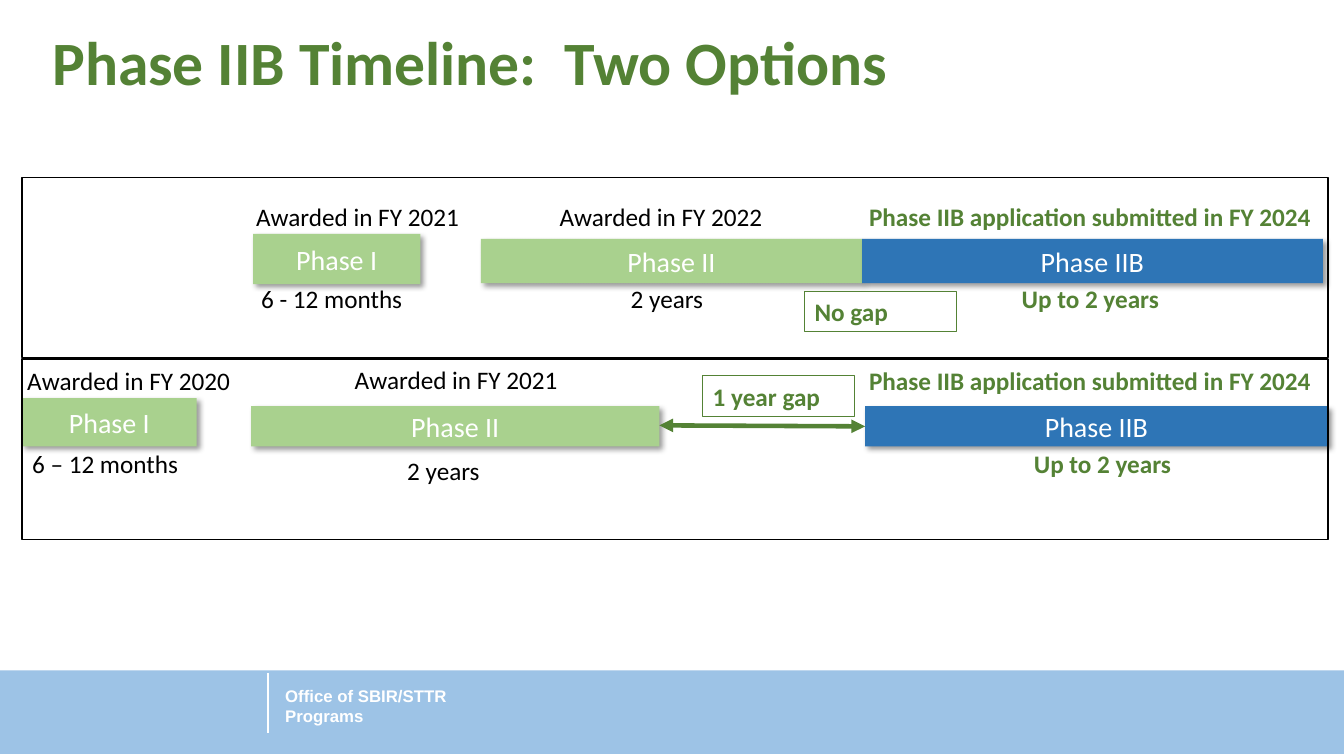
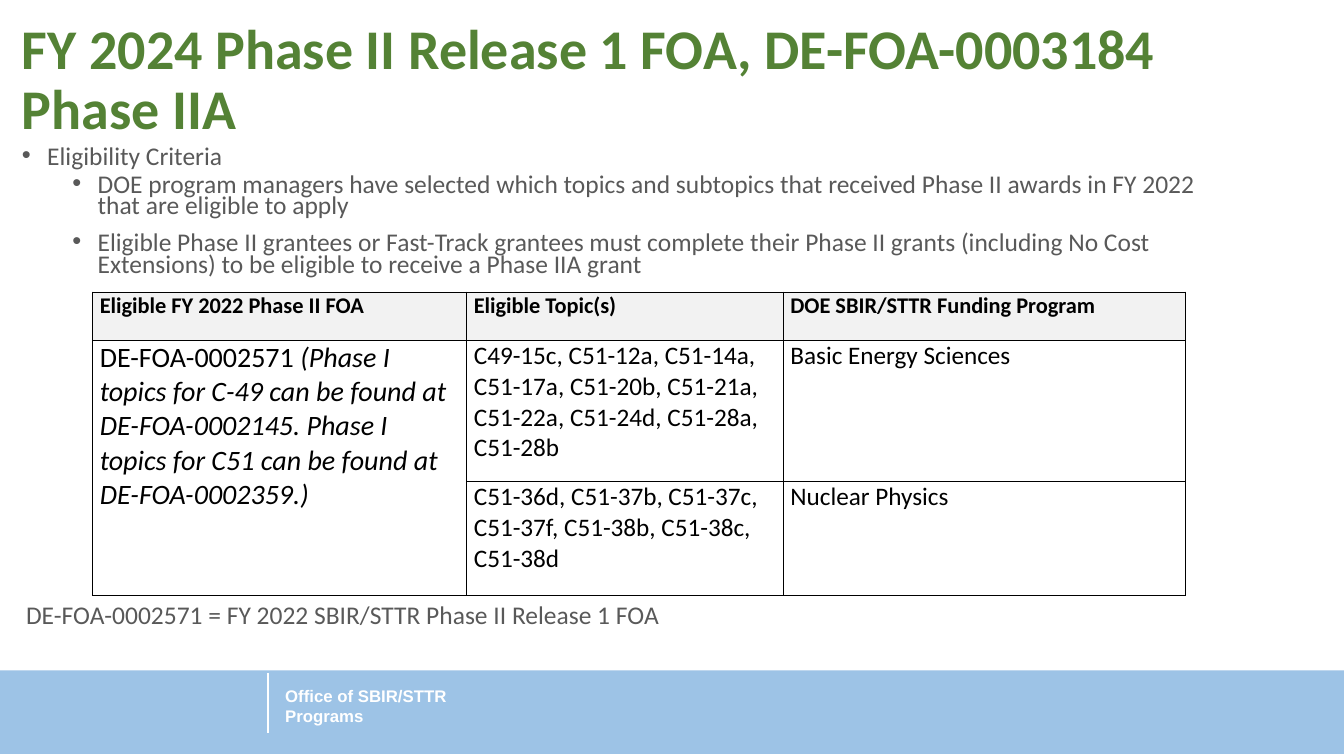
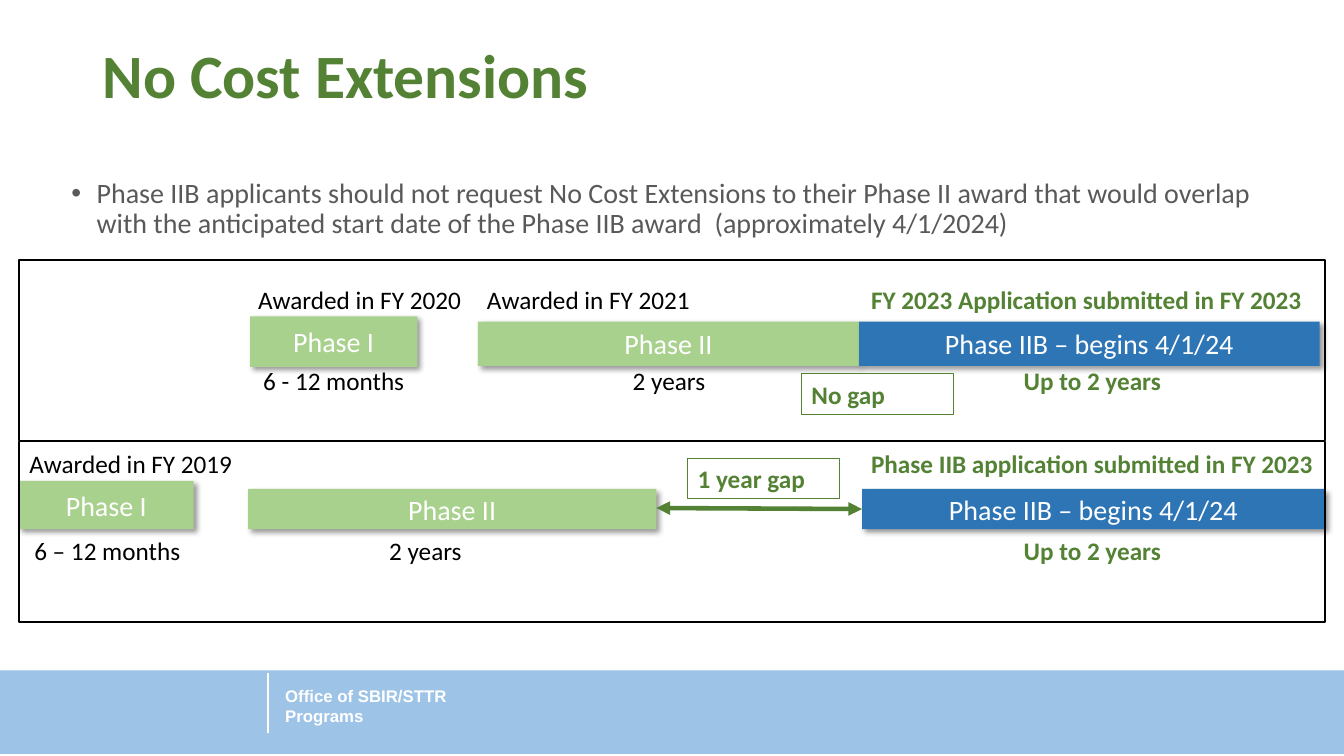
from lxml.etree import SubElement
from pptx import Presentation
from pptx.dml.color import RGBColor
from pptx.enum.shapes import MSO_CONNECTOR, MSO_SHAPE
from pptx.enum.text import MSO_ANCHOR, PP_ALIGN
from pptx.oxml import parse_xml
from pptx.oxml.ns import nsdecls, qn
from pptx.util import Inches, Pt

WHITE = RGBColor(0xFF, 0xFF, 0xFF)
BLACK = RGBColor(0, 0, 0)
GRAY = RGBColor(0x59, 0x59, 0x59)
PALE = RGBColor(0xF2, 0xF2, 0xF2)
GREEN = RGBColor(0x54, 0x82, 0x35)
LIME = RGBColor(0xA9, 0xD1, 0x8E)
BLUE = RGBColor(0x2E, 0x75, 0xB6)
SKY = RGBColor(0x9D, 0xC3, 0xE6)

PLAIN = "{2D5ABB26-0587-4C30-8999-92F81FD0307C}"
SHADE = (
    f"<a:effectLst {nsdecls('a')}>"
    '<a:outerShdw blurRad="50800" dist="38100" dir="2700000" algn="tl" rotWithShape="0">'
    '<a:srgbClr val="000000"><a:alpha val="40000"/></a:srgbClr>'
    "</a:outerShdw></a:effectLst>"
)


def style(para, size, color, bold=False, face="Calibri"):
    font = para.font
    font.name = face
    font.size = Pt(size)
    font.bold = bold
    font.color.rgb = color


def add_text(slide, box, text, size, color, bold=False, face="Calibri"):
    shape = slide.shapes.add_textbox(*map(Inches, box))
    frame = shape.text_frame
    frame.word_wrap = True
    para = frame.paragraphs[0]
    para.text = text
    style(para, size, color, bold, face)
    return shape


def add_box(slide, box, fill=None, line=None, width=1):
    shape = slide.shapes.add_shape(MSO_SHAPE.RECTANGLE, *map(Inches, box))
    shape.shadow.inherit = False
    if fill is None:
        shape.fill.background()
    else:
        shape.fill.solid()
        shape.fill.fore_color.rgb = fill
    if line is None:
        shape.line.fill.background()
    else:
        shape.line.color.rgb = line
        shape.line.width = Pt(width)
    return shape


def add_bar(slide, box, text, fill):
    shape = add_box(slide, box, fill)
    props = shape._element.spPr
    props.remove(props.find(qn("a:effectLst")))
    props.append(parse_xml(SHADE))
    para = shape.text_frame.paragraphs[0]
    para.text = text
    para.alignment = PP_ALIGN.CENTER
    style(para, 20, WHITE)


def add_tag(slide, left, top, text):
    shape = add_box(slide, (left, top, 1.51, 0.4), WHITE, GREEN, 0.75)
    shape.text_frame.vertical_anchor = MSO_ANCHOR.TOP
    para = shape.text_frame.paragraphs[0]
    para.text = text
    para.alignment = PP_ALIGN.LEFT
    style(para, 18, GREEN, True)


def add_line(slide, start, end, color, width, heads=False):
    ends = map(Inches, (*start, *end))
    line = slide.shapes.add_connector(MSO_CONNECTOR.STRAIGHT, *ends)
    line.line.color.rgb = color
    line.line.width = Pt(width)
    if heads:
        outline = line.line._get_or_add_ln()
        for name in ("a:headEnd", "a:tailEnd"):
            SubElement(outline, qn(name), type="triangle")
    SubElement(line._element.spPr, qn("a:effectLst"))


def add_slide(deck, title, box, size):
    slide = deck.slides.add_slide(deck.slide_layouts[6])
    add_box(slide, (0, 6.65, 13.33, 0.83), SKY)
    name = "Office of SBIR/STTR Programs"
    label = add_text(slide, (2.73, 6.74, 2.11, 0.52), name, 12, WHITE, True, "Arial")
    label.text_frame.vertical_anchor = MSO_ANCHOR.MIDDLE
    add_line(slide, (2.66, 6.68), (2.66, 7.27), WHITE, 1)
    head = add_text(slide, box, title, size, GREEN, True)
    head.text_frame.paragraphs[0].line_spacing = 0.9
    return slide


def add_list(slide, box, items, size, pitch):
    shape = slide.shapes.add_textbox(*map(Inches, box))
    frame = shape.text_frame
    frame.word_wrap = True
    for num, (level, text) in enumerate(items):
        para = frame.add_paragraph() if num else frame.paragraphs[0]
        para.text = text
        para.level = level
        props = para._p.get_or_add_pPr()
        props.set("marL", str(Inches(0.25 + 0.5 * level)))
        props.set("indent", str(Inches(-0.25)))
        SubElement(props, qn("a:buFont"), typeface="Arial")
        SubElement(props, qn("a:buChar"), char="•")
        para.line_spacing = pitch
        if num:
            para.space_before = Pt(5)
        if level:
            para.space_after = Pt(6)
        style(para, size, GRAY)


def add_grid(slide, left, top, cols, rows):
    size = map(Inches, (left, top, sum(cols), sum(rows)))
    table = slide.shapes.add_table(len(rows), len(cols), *size).table
    table.first_row = table.horz_banding = False
    table._tbl.tblPr.find(qn("a:tableStyleId")).text = PLAIN
    for col, width in zip(table.columns, cols):
        col.width = Inches(width)
    for row, height in zip(table.rows, rows):
        row.height = Inches(height)
    return table


def add_track(slide, left, top, shift, last, gap, notes):
    rows = [0.4, 0.41, 0.41, 0.41, 0.45, 0.41, 0.41]
    cols = [2.27, 2.27, 3.81, 4.59]
    table = add_grid(slide, left + shift, top + 0.2, cols, rows)
    for cell in table.iter_cells():
        cell.fill.background()
    for row, col, text, inset in notes:
        cell = table.cell(row, col)
        para = cell.text_frame.paragraphs[0]
        para.text = text
        if inset is None:
            para.alignment = PP_ALIGN.CENTER
        else:
            cell.margin_left = Inches(inset)
            cell.margin_right = 0
        final = col == 3
        style(para, 18, GREEN if final else BLACK, final)
    bars = [
        (2.29, 0.56, 1.66, 0.5, "Phase I", LIME),
        (4.55, 0.61, 3.78, 0.44, "Phase II", LIME),
        (8.33, 0.61, 4.57, 0.44, last, BLUE),
        (8.36, 2.27, 4.59, 0.4, last, BLUE),
        (0, 2.19, 1.73, 0.48, "Phase I", LIME),
        (2.27, 2.27, 4.05, 0.4, "Phase II", LIME),
    ]
    for x, y, wide, high, text, fill in bars:
        add_bar(slide, (left + x, top + y, wide, high), text, fill)
    start, end = (left + 6.32, top + 2.46), (left + 8.36, top + 2.47)
    add_line(slide, start, end, GREEN, 3.25, True)
    add_tag(slide, left + gap, top + 1.97, "1 year gap")
    add_tag(slide, left + 7.76, top + 1.13, "No gap")
    for row in range(2):
        add_box(slide, (left, top + 1.8 * row, 12.95, 1.79), line=BLACK)


def add_topics(slide):
    table = add_grid(slide, 0.92, 2.9, [3.71, 3.14, 3.99], [0.48, 1.4, 1.13])
    cells = [
        ["Eligible FY 2022 Phase II FOA", "Eligible Topic(s)", "DOE SBIR/STTR Funding Program"],
        ["DE-FOA-0002571 ",
         "C49-15c, C51-12a, C51-14a, C51-17a, C51-20b, C51-21a, C51-22a, C51-24d, C51-28a, C51-28b",
         "Basic Energy Sciences"],
        ["", "C51-36d, C51-37b, C51-37c, C51-37f, C51-38b, C51-38c, C51-38d", "Nuclear Physics"],
    ]
    for row, texts in enumerate(cells):
        for col, text in enumerate(texts):
            cell = table.cell(row, col)
            cell.margin_left = cell.margin_right = Inches(0.07)
            cell.margin_top = cell.margin_bottom = 0
            props = cell._tc.get_or_add_tcPr()
            for side in "LRTB":
                edge = SubElement(props, qn(f"a:ln{side}"), w=str(Pt(1)))
                fill = SubElement(edge, qn("a:solidFill"))
                SubElement(fill, qn("a:srgbClr"), val=str(BLACK))
            cell.fill.solid()
            cell.fill.fore_color.rgb = WHITE if row else PALE
            para = cell.text_frame.paragraphs[0]
            if text:
                para.text = text
            size = 16 if row == 0 else 18 if col else 20
            style(para, size, BLACK, row == 0)
    first = table.cell(1, 0)
    run = first.text_frame.paragraphs[0].add_run()
    run.text = (
        "(Phase I topics for C-49 can be found at DE-FOA-0002145. "
        "Phase I topics for C51 can be found at DE-FOA-0002359.)"
    )
    run.font.italic = True
    first.merge(table.cell(2, 0))


def add_options(deck):
    slide = add_slide(deck, "Phase IIB Timeline:  Two Options", (0.42, 0.27, 11.5, 1.45), 44)
    final = "Phase IIB application submitted in FY 2024"
    notes = [
        (0, 1, "Awarded in FY 2021", 0.1),
        (0, 2, "Awarded in FY 2022", 0.84),
        (0, 3, final, 0.1),
        (2, 1, "6 - 12 months", 0.15),
        (2, 2, "2 years", None),
        (2, 3, "Up to 2 years", None),
        (4, 0, "Awarded in FY 2020", 0.1),
        (4, 3, final, 0.1),
    ]
    add_track(slide, 0.22, 1.76, -0.05, "Phase IIB", 6.75, notes)
    add_text(slide, (0.22, 4.4, 6.67, 0.4), "6 – 12 months", 18, BLACK)
    add_text(slide, (3.94, 4.47, 6.62, 0.4), "2 years", 18, BLACK)
    span = add_text(slide, (7.6, 4.4, 6.67, 0.4), "Up to 2 years", 18, GREEN, True)
    span.text_frame.paragraphs[0].alignment = PP_ALIGN.CENTER
    add_text(slide, (3.42, 3.57, 7.13, 0.4), "Awarded in FY 2021", 18, BLACK)


def add_release(deck):
    title = "FY 2024 Phase II Release 1 FOA, DE-FOA-0003184\nPhase IIA"
    slide = add_slide(deck, title, (0.12, 0.16, 12.44, 0.85), 40)
    items = [
        (0, "Eligibility Criteria"),
        (1, "DOE program managers have selected which topics and subtopics that received "
            "Phase II awards in FY 2022 that are eligible to apply"),
        (1, "Eligible Phase II grantees or Fast-Track grantees must complete their Phase II "
            "grants (including No Cost Extensions) to be eligible to receive a Phase IIA grant"),
    ]
    add_list(slide, (0.12, 1.42, 12, 1.4), items, 18.2, 0.7)
    add_topics(slide)
    note = "DE-FOA-0002571 = FY 2022 SBIR/STTR Phase II Release 1 FOA"
    add_text(slide, (0.16, 5.89, 12, 0.4), note, 18.2, GRAY)


def add_delays(deck):
    slide = add_slide(deck, "No Cost Extensions", (0.92, 0.4, 11.5, 1.45), 44)
    items = [
        (0, "Phase IIB applicants should not request No Cost Extensions to their Phase II award "
            "that would overlap with the anticipated start date of the Phase IIB award  "
            "(approximately 4/1/2024)"),
    ]
    add_list(slide, (0.61, 1.73, 12, 0.8), items, 20, 0.9)
    notes = [
        (0, 1, "Awarded in FY 2020", 0.1),
        (0, 2, "Awarded in FY 2021", 0.1),
        (0, 3, "FY 2023 Application submitted in FY 2023", 0.1),
        (2, 1, "6 - 12 months", 0.15),
        (2, 2, "2 years", None),
        (2, 3, "Up to 2 years", None),
        (4, 0, "Awarded in FY 2019", 0.1),
        (4, 3, "Phase IIB application submitted in FY 2023", 0.1),
        (6, 0, "6 – 12 months", 0.15),
        (6, 1, "2 years", 1.4),
        (6, 3, "Up to 2 years", None),
    ]
    add_track(slide, 0.19, 2.58, 0, "Phase IIB – begins 4/1/24", 6.63, notes)


def main():
    deck = Presentation()
    deck.slide_width = Inches(13.33)
    deck.slide_height = Inches(7.5)
    add_options(deck)
    add_release(deck)
    add_delays(deck)
    deck.save("out.pptx")


if __name__ == "__main__":
    main()
